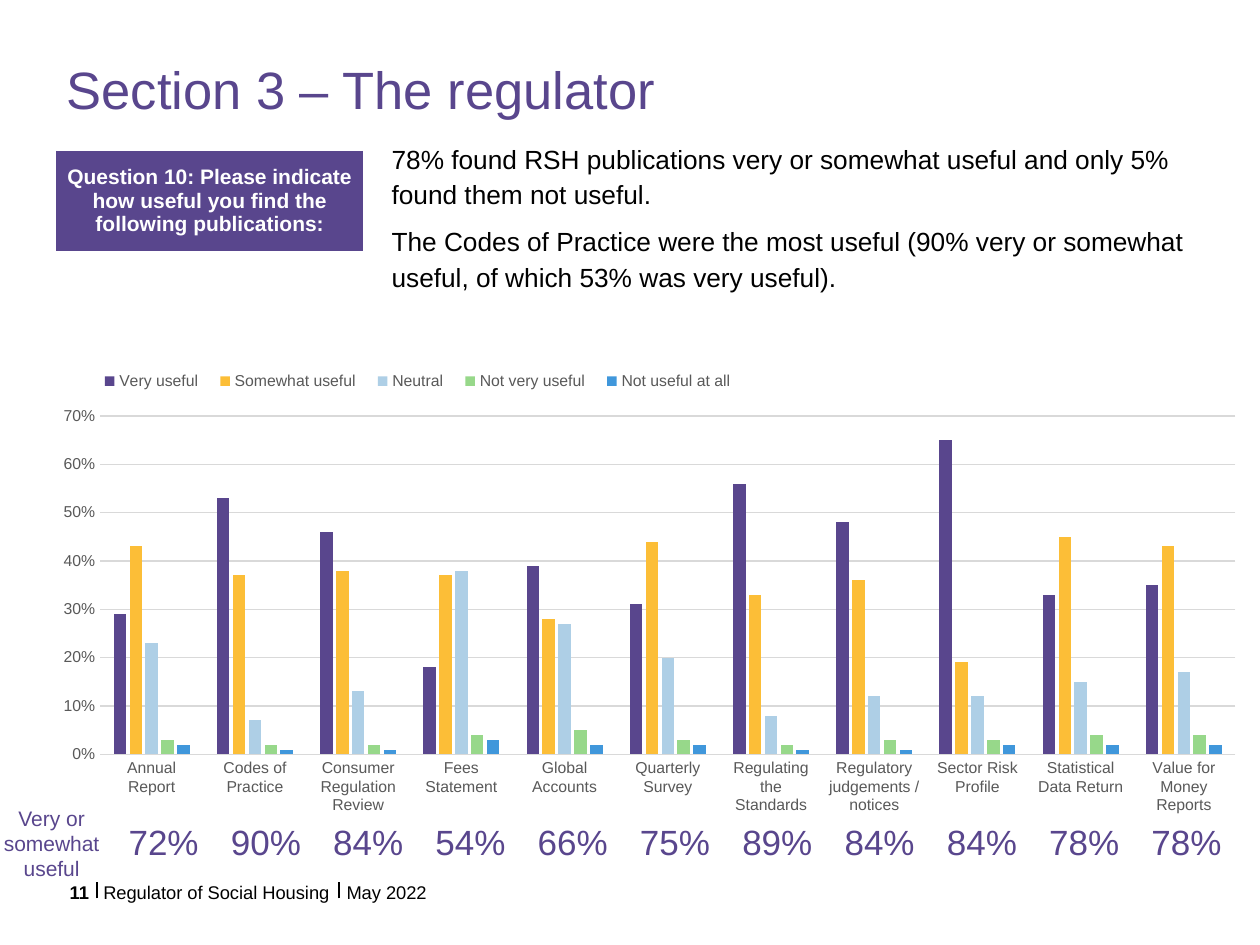
from lxml import etree
from pptx import Presentation
from pptx.chart.data import CategoryChartData
from pptx.dml.color import RGBColor
from pptx.enum.chart import XL_CHART_TYPE, XL_LEGEND_POSITION, XL_TICK_MARK
from pptx.enum.shapes import MSO_CONNECTOR, MSO_SHAPE
from pptx.enum.text import MSO_ANCHOR, PP_ALIGN
from pptx.oxml.ns import qn
from pptx.util import Pt

PX = 9144  # 100 px to the inch
FONT = "Arial"
PURPLE = RGBColor(0x59, 0x46, 0x8D)
AMBER = RGBColor(0xFC, 0xBE, 0x37)
PALE_BLUE = RGBColor(0xAE, 0xCF, 0xE6)
GREEN = RGBColor(0x97, 0xD8, 0x8A)
BLUE = RGBColor(0x40, 0x97, 0xDB)
GREY = RGBColor(0x59, 0x59, 0x59)
GRID = RGBColor(0xD9, 0xD9, 0xD9)
BLACK = RGBColor(0, 0, 0)
WHITE = RGBColor(0xFF, 0xFF, 0xFF)

TITLE = "Section 3 – The regulator"
QUESTION = "Question 10: Please indicate how useful you find the following publications:"
FINDINGS = [
    "78% found RSH publications very or somewhat useful and only 5% found them not useful.",
    "The Codes of Practice were the most useful (90% very or somewhat useful, "
    "of which 53% was very useful).",
]
PUBLICATIONS = [
    "Annual Report", "Codes of Practice", "Consumer Regulation Review", "Fees Statement",
    "Global Accounts", "Quarterly Survey", "Regulating the Standards",
    "Regulatory judgements / notices", "Sector Risk Profile", "Statistical Data Return",
    "Value for Money Reports",
]
RATINGS = [  # name, colour, percent per publication
    ("Very useful", PURPLE, [29, 53, 46, 18, 39, 31, 56, 48, 65, 33, 35]),
    ("Somewhat useful", AMBER, [43, 37, 38, 37, 28, 44, 33, 36, 19, 45, 43]),
    ("Neutral", PALE_BLUE, [23, 7, 13, 38, 27, 20, 8, 12, 12, 15, 17]),
    ("Not very useful", GREEN, [3, 2, 2, 4, 5, 3, 2, 3, 3, 4, 4]),
    ("Not useful at all", BLUE, [2, 1, 1, 3, 2, 2, 1, 1, 2, 2, 2]),
]
TOTALS_LABEL = ["Very or somewhat", "useful"]
TOTALS = ["72%", "90%", "84%", "54%", "66%", "75%", "89%", "84%", "84%", "78%", "78%"]
FOOTER = [  # text, left, width, bold, alignment
    ("11", 53, 20, True, PP_ALIGN.CENTER),
    ("Regulator of Social Housing", 82, 183, False, PP_ALIGN.LEFT),
    ("May 2022", 275, 235, False, PP_ALIGN.LEFT),
]
FOOTER_RULES = [77, 269]


def px(*lengths):
    return [n * PX for n in lengths]


def style_font(font, size, color, bold=False):
    font.name, font.size, font.bold = FONT, Pt(size), bold
    font.color.rgb = color


def write(tf, lines, size, color, bold=False, align=PP_ALIGN.LEFT, spacing=None, after=None):
    tf.word_wrap = True
    for i, line in enumerate(lines):
        p = tf.add_paragraph() if i else tf.paragraphs[0]
        p.alignment = align
        if spacing:
            p.line_spacing = spacing
        if after:
            p.space_after = Pt(after)
        r = p.add_run()
        r.text = line
        style_font(r.font, size, color, bold)


def clear_margins(target):
    target.margin_left = target.margin_right = target.margin_top = target.margin_bottom = 0


def add_text(slide, box, lines, size, color, inset=True, **style):
    tf = slide.shapes.add_textbox(*px(*box)).text_frame
    if not inset:
        clear_margins(tf)
    write(tf, lines, size, color, **style)


def add_plain_table(slide, box, columns):
    """Add a one-row table without banding or fills and return its cells."""
    table = slide.shapes.add_table(1, columns, *px(*box)).table
    table.first_row = table.horz_banding = False
    cells = [table.cell(0, i) for i in range(columns)]
    for cell in cells:
        cell.fill.background()
    return cells


def set_borders(cell, color=None):
    """Draw thin borders on all four sides, or none without a colour."""
    tc_pr = cell._tc.get_or_add_tcPr()
    for i, side in enumerate(("lnL", "lnR", "lnT", "lnB")):
        ln = etree.Element(qn(f"a:{side}"), w=str(Pt(0.5)))
        if color is None:
            etree.SubElement(ln, qn("a:noFill"))
        else:
            fill = etree.SubElement(ln, qn("a:solidFill"))
            etree.SubElement(fill, qn("a:srgbClr"), val=str(color))
        tc_pr.insert(i, ln)


def make_layout(x, y, w, h, inner=False):
    """Return a manual chart layout in fractions of the chart area."""
    layout = etree.Element(qn("c:layout"))
    manual = etree.SubElement(layout, qn("c:manualLayout"))
    values = [("xMode", "edge"), ("yMode", "edge"), ("x", x), ("y", y), ("w", w), ("h", h)]
    if inner:
        values.insert(0, ("layoutTarget", "inner"))
    for tag, value in values:
        etree.SubElement(manual, qn(f"c:{tag}"), val=str(value))
    return layout


def add_ratings_chart(slide):
    data = CategoryChartData(number_format="0%")
    data.categories = PUBLICATIONS
    for name, _, percents in RATINGS:
        data.add_series(name, [n / 100 for n in percents])
    chart = slide.shapes.add_chart(
        XL_CHART_TYPE.COLUMN_CLUSTERED, *px(31, 286, 969, 368), data).chart
    chart.has_title = False
    style_font(chart.font, 10, BLACK)

    plot = chart.plots[0]
    plot.gap_width, plot.overlap, plot.vary_by_categories = 219, -27, False
    for series, (_, color, _) in zip(plot.series, RATINGS):
        series.format.fill.solid()
        series.format.fill.fore_color.rgb = color

    for axis in (chart.category_axis, chart.value_axis):
        axis.major_tick_mark = axis.minor_tick_mark = XL_TICK_MARK.NONE
        style_font(axis.tick_labels.font, 9, GREY)
    axis_line = chart.category_axis.format.line
    value_axis = chart.value_axis
    value_axis.minimum_scale, value_axis.maximum_scale, value_axis.major_unit = 0, 0.7, 0.1
    value_axis.tick_labels.number_format = "0%"
    value_axis.tick_labels.number_format_is_linked = False
    value_axis.format.line.fill.background()
    for line in (axis_line, value_axis.major_gridlines.format.line):
        line.color.rgb, line.width = GRID, Pt(0.75)

    chart.has_legend = True
    legend = chart.legend
    legend.position, legend.include_in_layout = XL_LEGEND_POSITION.TOP, False
    style_font(legend.font, 9, GREY)

    plot_area = chart._chartSpace.chart.plotArea
    for parent in (plot_area, legend._element):
        for old in parent.findall(qn("c:layout")):
            parent.remove(old)
    plot_area.insert(0, make_layout(0.05, 0.12, 0.93, 0.73, inner=True))
    legend._element.find(qn("c:legendPos")).addnext(make_layout(0.04, 0.02, 0.54, 0.05))


def main():
    prs = Presentation()
    prs.slide_width, prs.slide_height = px(1000, 750)
    slide = prs.slides.add_slide(prs.slide_layouts[6])

    for x in FOOTER_RULES:
        rule = slide.shapes.add_connector(MSO_CONNECTOR.STRAIGHT, *px(x, 713, x, 700))
        rule.line.color.rgb, rule.line.width = BLACK, Pt(0.75)
        etree.SubElement(rule._element.spPr, qn("a:effectLst"))
    for text, left, width, bold, align in FOOTER:
        add_text(slide, (left, 699, width, 12), [text], 10.5, BLACK,
                 inset=False, bold=bold, align=align)
    add_text(slide, (53, 51, 887, 79), [TITLE], 30, PURPLE, inset=False, spacing=0.9)

    [question] = add_plain_table(slide, (45, 120, 243, 79), 1)
    question.fill.solid()
    question.fill.fore_color.rgb = PURPLE
    question.vertical_anchor = MSO_ANCHOR.MIDDLE
    clear_margins(question)
    set_borders(question, PURPLE)
    write(question.text_frame, [QUESTION], 12, WHITE, bold=True, align=PP_ALIGN.CENTER)

    add_ratings_chart(slide)

    for cell, total in zip(add_plain_table(slide, (92, 649, 893, 41), len(TOTALS)), TOTALS):
        set_borders(cell)
        write(cell.text_frame, [total], 20, PURPLE)
    add_text(slide, (-26, 634, 134, 71), TOTALS_LABEL, 12, PURPLE, align=PP_ALIGN.CENTER)

    findings = slide.shapes.add_shape(MSO_SHAPE.RECTANGLE, *px(301, 105, 683, 131))
    findings.shadow.inherit = False
    findings.fill.solid()
    findings.fill.fore_color.rgb = WHITE
    findings.line.fill.background()
    findings.text_frame.vertical_anchor = MSO_ANCHOR.TOP
    write(findings.text_frame, FINDINGS, 15, BLACK, spacing=1.14, after=6)

    prs.save("out.pptx")


if __name__ == "__main__":
    main()
